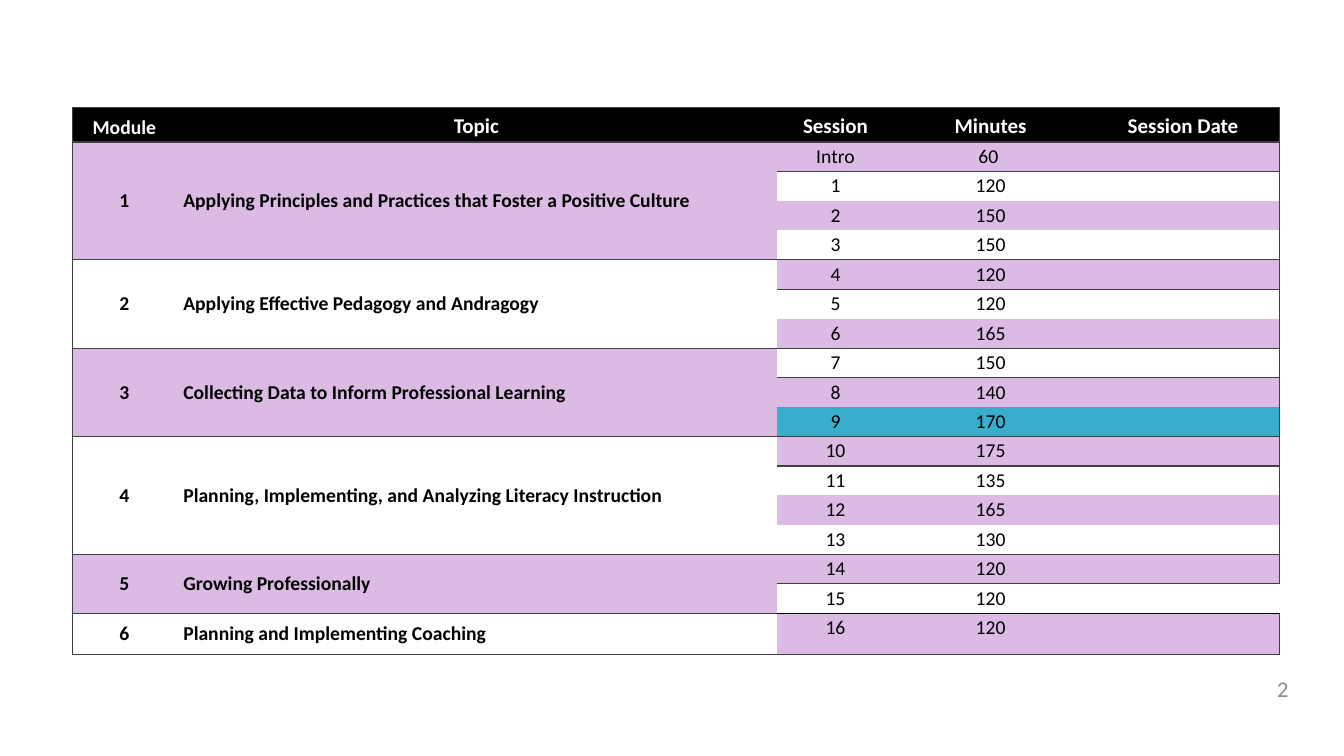
import dataclasses
from typing import Optional

import lxml.etree
import pptx
import pptx.dml.color
import pptx.enum.text
import pptx.oxml.ns
import pptx.table
import pptx.util

Cm = pptx.util.Cm
ALIGN = pptx.enum.text.PP_ALIGN
ANCHOR = pptx.enum.text.MSO_ANCHOR

FONT = "Calibri"
BLACK, WHITE, GREY = "000000", "FFFFFF", "8C8C8C"
LILAC, BLUE, RULE = "DBBBE3", "38AECC", "3F3F3F"
NO_STYLE = "{2D5ABB26-0587-4C30-8999-92F81FD0307C}"

HEADINGS = ["Module", "Topic", "Session", "Minutes", "Session Date"]
COLUMN_WIDTHS = [2.61, 15.13, 2.97, 4.85, 4.85]
HEADER_HEIGHT, ROW_HEIGHT, LAST_HEIGHT = 0.88, 0.74, 1.05
HIGHLIGHTED_SESSION = "9"
OPEN_SESSION = "15"  # row without a right border


@dataclasses.dataclass
class Module:
    topic: str
    sessions: list[tuple[str, str]]


@dataclasses.dataclass
class CellStyle:
    fill: str
    size: int = 14
    color: str = BLACK
    bold: bool = False
    align: Optional[ALIGN] = ALIGN.CENTER
    anchor: ANCHOR = ANCHOR.TOP
    side: float = 0.16
    edge: float = 0.07


MODULES = [
    Module("Applying Principles and Practices that Foster a Positive Culture",
           [("Intro", "60 "), ("1", "120"), ("2", "150"), ("3", "150")]),
    Module("Applying Effective Pedagogy and Andragogy",
           [("4", "120"), ("5", "120"), ("6", "165")]),
    Module("Collecting Data to Inform Professional Learning",
           [("7", "150"), ("8", "140"), ("9", "170")]),
    Module("Planning, Implementing, and Analyzing Literacy Instruction",
           [("10", "175"), ("11", "135"), ("12", "165"), ("13", "130")]),
    Module("Growing Professionally", [("14", "120"), ("15", "120")]),
    Module("Planning and Implementing Coaching", [("16", "120")]),
]


def rgb(color: str) -> pptx.dml.color.RGBColor:
    return pptx.dml.color.RGBColor.from_string(color)


def format_span(font, size: int, color: str, bold: bool = False) -> None:
    font.name = FONT
    font.size = pptx.util.Pt(size)
    font.bold = bold
    font.color.rgb = rgb(color)


def set_borders(cell, borders: dict[str, str]) -> None:
    """Draw 1 pt borders; the keys are L, R, T and B."""
    properties = cell._tc.get_or_add_tcPr()
    qn = pptx.oxml.ns.qn
    for side in "LRTB":
        if side in borders:
            line = lxml.etree.SubElement(properties, qn(f"a:ln{side}"), w="12700")
            fill = lxml.etree.SubElement(line, qn("a:solidFill"))
            lxml.etree.SubElement(fill, qn("a:srgbClr"), val=borders[side])


def fill_cell(cell, text: str, style: CellStyle, borders: dict[str, str]) -> None:
    set_borders(cell, borders)
    cell.fill.solid()
    cell.fill.fore_color.rgb = rgb(style.fill)
    cell.margin_left = cell.margin_right = Cm(style.side)
    cell.margin_top = cell.margin_bottom = Cm(style.edge)
    cell.vertical_anchor = style.anchor
    para = cell.text_frame.paragraphs[0]
    para.text = text
    para.alignment = style.align
    for span in para.runs:
        format_span(span.font, style.size, style.color, style.bold)
    # Keeps empty cells from stretching their row
    lxml.etree.SubElement(para._p, pptx.oxml.ns.qn("a:endParaRPr"),
                          sz=str(style.size * 100))


def add_header(table: pptx.table.Table) -> None:
    for column, heading in enumerate(HEADINGS):
        style = CellStyle(BLACK, 15 if column else 14, WHITE, True, anchor=ANCHOR.BOTTOM)
        borders = {"T": RULE, "B": RULE}
        if column == 0:
            borders["L"] = RULE
        if column == len(HEADINGS) - 1:
            borders["R"] = RULE
        fill_cell(table.cell(0, column), heading, style, borders)


def add_module(table: pptx.table.Table, number: int, module: Module, first: int) -> None:
    last = first + len(module.sessions) - 1
    # Module number and topic, merged over the sessions
    shade = LILAC if number % 2 else WHITE
    number_style = CellStyle(shade, bold=True, anchor=ANCHOR.MIDDLE, side=0.18, edge=0)
    topic_style = dataclasses.replace(number_style, align=ALIGN.LEFT, edge=0.07)
    labels = [(str(number), number_style, {"L": RULE}), (module.topic, topic_style, {})]
    for column, (label, style, outer) in enumerate(labels):
        for row in range(first, last + 1):
            fill_cell(table.cell(row, column), label if row == first else "",
                      style, {"T": RULE, "B": RULE, **outer} if row == first else outer)
        if last > first:
            table.cell(first, column).merge(table.cell(last, column))

    # Session rows
    for row, (session, minutes) in enumerate(module.sessions, first):
        shade = LILAC if row % 2 else WHITE
        if session == HIGHLIGHTED_SESSION:
            shade = BLUE
        for column, text in enumerate((session, minutes, ""), 2):
            borders = {}
            if row == first:
                borders["T"] = BLACK if number == len(MODULES) else RULE
            if row == last:
                borders["B"] = BLACK if session == OPEN_SESSION else RULE
            if column == len(HEADINGS) - 1 and session != OPEN_SESSION:
                borders["R"] = RULE
            fill_cell(table.cell(row, column), text, CellStyle(shade), borders)


def add_schedule(page) -> None:
    session_count = sum(len(module.sessions) for module in MODULES)
    heights = [HEADER_HEIGHT] + [ROW_HEIGHT] * (session_count - 1) + [LAST_HEIGHT]
    frame = page.shapes.add_table(len(heights), len(HEADINGS), Cm(1.83), Cm(2.7),
                                  Cm(sum(COLUMN_WIDTHS)), Cm(sum(heights)))
    table = frame.table
    table.horz_banding = False
    next(table._tbl.iter(pptx.oxml.ns.qn("a:tableStyleId"))).text = NO_STYLE
    for column, width in zip(table.columns, COLUMN_WIDTHS):
        column.width = Cm(width)
    for row, height in zip(table.rows, heights):
        row.height = Cm(height)

    add_header(table)
    first = 1
    for number, module in enumerate(MODULES, 1):
        add_module(table, number, module, first)
        first += len(module.sessions)


def add_page_number(page) -> None:
    box = page.shapes.add_textbox(Cm(26.8), Cm(16.97), Cm(5.92), Cm(0.76))
    box.text_frame.word_wrap = True
    box.text_frame.vertical_anchor = ANCHOR.MIDDLE
    para = box.text_frame.paragraphs[0]
    para.text = "2"
    para.alignment = ALIGN.RIGHT
    format_span(para.runs[0].font, 16, GREY)


def main() -> None:
    deck = pptx.Presentation()
    deck.slide_width, deck.slide_height = Cm(33.87), Cm(19.05)
    page = deck.slides.add_slide(deck.slide_layouts[6])
    add_schedule(page)
    add_page_number(page)
    deck.save("out.pptx")


if __name__ == "__main__":
    main()
